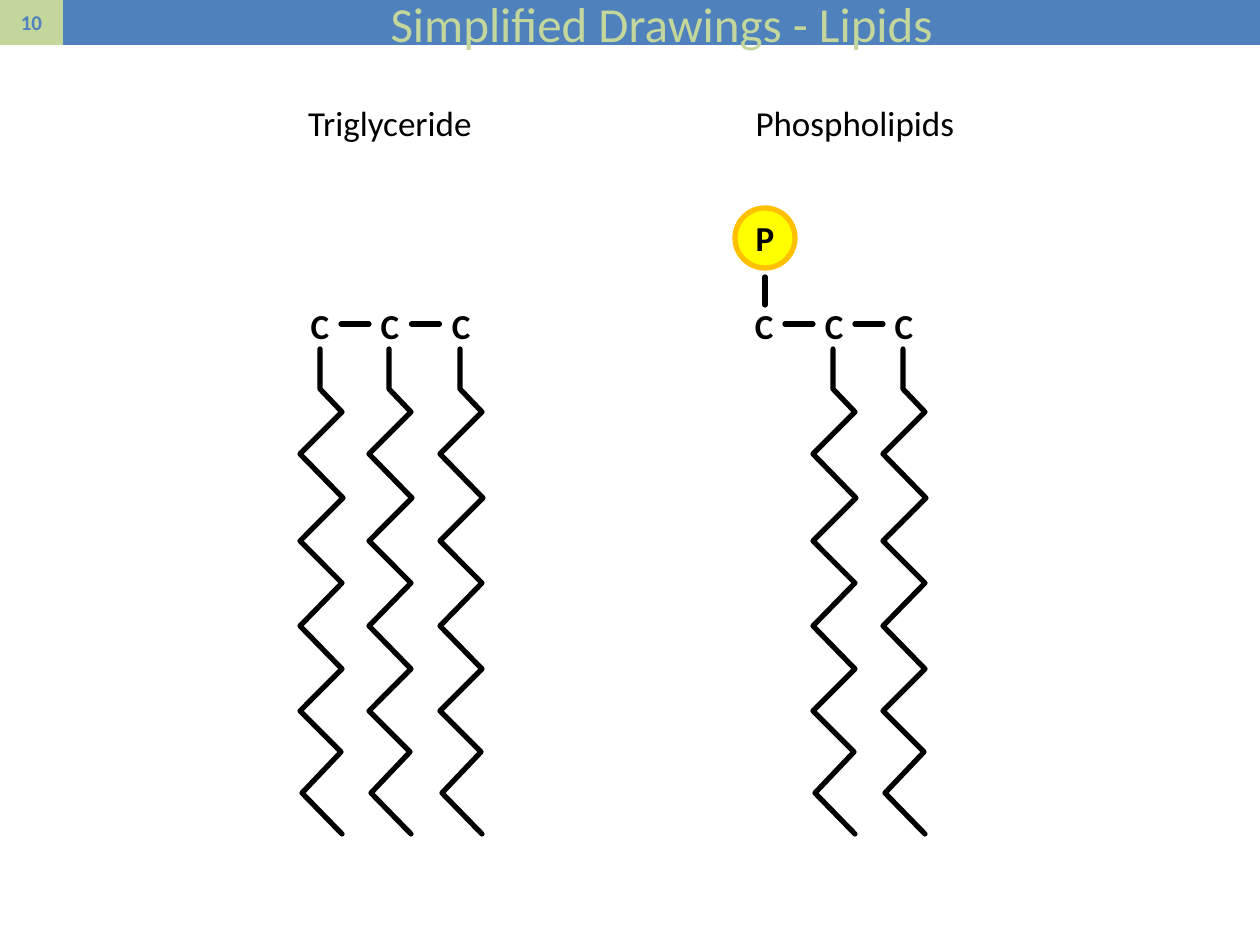
from lxml.etree import SubElement
from pptx import Presentation
from pptx.dml.color import RGBColor
from pptx.enum.shapes import MSO_CONNECTOR, MSO_SHAPE
from pptx.enum.text import MSO_ANCHOR, MSO_AUTO_SIZE, PP_ALIGN
from pptx.oxml.ns import qn
from pptx.util import Emu, Inches, Pt

TITLE = "Simplified Drawings - Lipids"
PAGE = "10"
# heading centre, carbon centres, chain centres, bond to phosphate
LIPIDS = [
    dict(name="Triglyceride", heading_x=390, carbons=(320, 390, 461),
         chains=(320, 389, 460), phosphate_x=None),
    dict(name="Phospholipids", heading_x=855, carbons=(764, 834, 904),
         chains=(833, 903), phosphate_x=765),
]
# fatty acid: x offset from the chain centre, y on the slide
CHAIN = [(0, 349), (0, 389), (22, 412), (-20, 454), (23, 498), (-20, 541),
         (22, 583), (-20, 626), (22, 669), (-20, 711), (21, 752), (-18, 793),
         (22, 834)]

BLACK = RGBColor(0x00, 0x00, 0x00)
BLUE = RGBColor(0x4F, 0x81, 0xBD)
GREEN = RGBColor(0xC3, 0xD6, 0x9B)
YELLOW = RGBColor(0xFF, 0xFF, 0x00)
ORANGE = RGBColor(0xFF, 0xC0, 0x00)
FONT = "Calibri"
SCALE = 914400 / 126
BAR_H, PAGE_W, SLIDE_W = 45, 63, 1260
LABEL_H, BOND_Y, BOND_HALF = 55, 324, 14


def px(*values):
    return [Emu(round(v * SCALE)) for v in values]


def write(s, text, size, color, bold=False):
    tf = s.text_frame
    tf.text = text
    p = tf.paragraphs[0]
    p.alignment = PP_ALIGN.CENTER
    font = p.runs[0].font
    font.name, font.size, font.bold = FONT, Pt(size), bold
    font.color.rgb = color
    return tf


def add_label(shapes, text, center_x, top, width, bold=False):
    s = shapes.add_textbox(*px(center_x - width / 2, top, width, LABEL_H))
    tf = write(s, text, 20, BLACK, bold)
    tf.word_wrap = True
    tf.auto_size = MSO_AUTO_SIZE.SHAPE_TO_FIT_TEXT


def add_filled(shapes, kind, box, fill):
    s = shapes.add_shape(kind, *px(*box))
    s.shadow.inherit = False
    s.fill.solid()
    s.fill.fore_color.rgb = fill
    s.line.fill.background()
    return s


def set_stroke(s, color=BLACK):
    s.line.color.rgb = color
    s.line.width = Pt(3)


def round_ends(s):
    ln = s.line._get_or_add_ln()
    ln.set("cap", "rnd")
    SubElement(ln, qn("a:round"))


def add_bond(shapes, *ends):
    s = shapes.add_connector(MSO_CONNECTOR.STRAIGHT, *px(*ends))
    set_stroke(s)
    round_ends(s)
    SubElement(s._element.spPr, qn("a:effectLst"))


def add_chain(shapes, x):
    points = [(x + dx, y) for dx, y in CHAIN]
    builder = shapes.build_freeform(*points[0], scale=SCALE)
    builder.add_line_segments(points[1:], close=False)
    s = builder.convert_to_shape()
    s.shadow.inherit = False
    s.fill.background()
    set_stroke(s)
    round_ends(s)


def add_phosphate(shapes, x):
    add_bond(shapes, x, 305, x, 277)
    s = add_filled(shapes, MSO_SHAPE.OVAL, (x - 30, 208, 60, 60), YELLOW)
    set_stroke(s, ORANGE)
    tf = write(s, "P", 20, BLACK, True)
    tf.vertical_anchor = MSO_ANCHOR.MIDDLE
    tf.word_wrap = False


def add_lipid(slide, lipid):
    shapes = slide.shapes.add_group_shape().shapes
    carbons = lipid["carbons"]
    for x in carbons:
        add_label(shapes, "C", x, 298, 58, bold=True)
    for left, right in zip(carbons, carbons[1:]):
        middle = (left + right) / 2
        add_bond(shapes, middle - BOND_HALF, BOND_Y, middle + BOND_HALF, BOND_Y)
    for x in lipid["chains"]:
        add_chain(shapes, x)
    if lipid["phosphate_x"]:
        add_phosphate(shapes, lipid["phosphate_x"])
    add_label(slide.shapes, lipid["name"], lipid["heading_x"], 95, 343)


def main():
    prs = Presentation()
    prs.slide_width, prs.slide_height = Inches(10), Inches(7.5)
    slide = prs.slides.add_slide(prs.slide_layouts[5])

    title = slide.shapes.title
    title.left, title.top, title.width, title.height = px(
        PAGE_W, 0, SLIDE_W - PAGE_W, BAR_H)
    title.fill.solid()
    title.fill.fore_color.rgb = BLUE
    tf = write(title, TITLE, 28, GREEN)
    tf.vertical_anchor = MSO_ANCHOR.MIDDLE
    tf.auto_size = MSO_AUTO_SIZE.NONE

    page = add_filled(slide.shapes, MSO_SHAPE.RECTANGLE, (0, 0, PAGE_W, BAR_H), GREEN)
    write(page, PAGE, 12, BLUE, True).vertical_anchor = MSO_ANCHOR.MIDDLE

    for lipid in LIPIDS:
        add_lipid(slide, lipid)
    prs.save("out.pptx")


if __name__ == "__main__":
    main()
